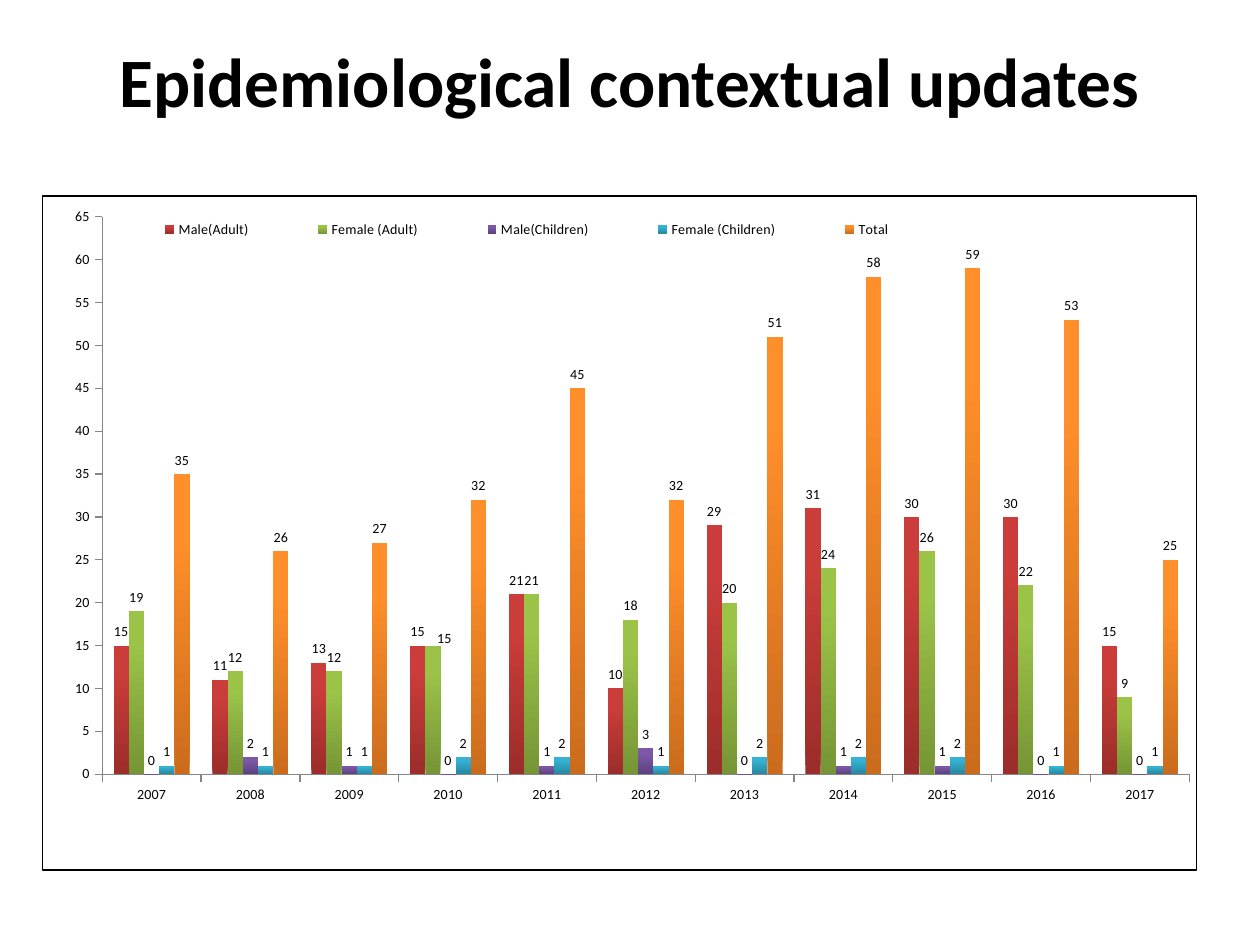
from dataclasses import dataclass

from lxml.etree import SubElement
from pptx import Presentation
from pptx.chart.data import CategoryChartData
from pptx.dml.color import RGBColor
from pptx.enum.chart import XL_CHART_TYPE, XL_LABEL_POSITION, XL_LEGEND_POSITION, XL_TICK_MARK
from pptx.enum.text import MSO_ANCHOR, PP_ALIGN
from pptx.oxml import parse_xml
from pptx.oxml.ns import nsdecls, qn
from pptx.util import Inches, Pt


@dataclass(frozen=True)
class Theme:
    """Colours, font and type sizes of the slide."""
    font: str = "Calibri"
    text: str = "000000"
    axis: str = "868686"
    title_size: float = 39.6
    chart_size: float = 8


THEME = Theme()
YEARS = [str(year) for year in range(2007, 2018)]
SERIES = [
    ("Male(Adult)", "9B2D2A", "CB3D3A", (15, 11, 13, 15, 21, 10, 29, 31, 30, 30, 15)),
    ("Female (Adult)", "769535", "9BC348", (19, 12, 12, 15, 21, 18, 20, 24, 26, 22, 9)),
    ("Male(Children)", "5D417E", "7B58A6", (0, 2, 1, 0, 1, 3, 0, 1, 1, 0, 0)),
    ("Female (Children)", "2787A0", "36B1D2", (1, 1, 1, 2, 2, 1, 2, 2, 2, 1, 1)),
    ("Total", "CB6C1D", "FF8F2A", (35, 26, 27, 32, 45, 32, 51, 58, 59, 53, 25)),
]


def style_font(font, size):
    """Apply the theme font and text colour at a size."""
    font.name = THEME.font
    font.size = Pt(size)
    font.color.rgb = RGBColor.from_string(THEME.text)


def add_title(slide, text):
    """Add the bold centred slide title."""
    frame = slide.shapes.add_textbox(Inches(0.5), Inches(0.3), Inches(9), Inches(1.25)).text_frame
    frame.word_wrap = True
    frame.vertical_anchor = MSO_ANCHOR.TOP
    frame.margin_top = frame.margin_bottom = 0
    paragraph = frame.paragraphs[0]
    paragraph.text = text
    paragraph.alignment = PP_ALIGN.CENTER
    style_font(paragraph.font, THEME.title_size)
    paragraph.font.bold = True


def set_layout(parent, index, **settings):
    """Give a chart element a manual layout."""
    for layout in parent.findall(qn("c:layout")):
        parent.remove(layout)
    layout = parse_xml(f"<c:layout {nsdecls('c')}><c:manualLayout/></c:layout>")
    for name, value in settings.items():
        SubElement(layout[0], qn(f"c:{name}")).set("val", str(value))
    parent.insert(index, layout)


def style_axis(axis):
    """Draw an axis with outside ticks and no gridlines."""
    axis.has_major_gridlines = False
    axis.major_tick_mark = XL_TICK_MARK.OUTSIDE
    axis.minor_tick_mark = XL_TICK_MARK.NONE
    axis.format.line.color.rgb = RGBColor.from_string(THEME.axis)
    axis.format.line.width = Pt(0.75)
    style_font(axis.tick_labels.font, THEME.chart_size)


def style_series(series, dark, light):
    """Fill bars from dark at the foot to light, and label their values."""
    fill = series.format.fill
    fill.gradient()
    fill.gradient_angle = 90
    for stop, color, position in zip(fill.gradient_stops, (dark, light), (0, 0.8)):
        stop.color.rgb = RGBColor.from_string(color)
        stop.position = position
    series.invert_if_negative = False
    labels = series.data_labels
    labels.show_value = True
    labels.position = XL_LABEL_POSITION.OUTSIDE_END
    style_font(labels.font, THEME.chart_size)


def shift_label(series, point, x, y):
    """Move one value label by fractions of the chart size."""
    label = series.points[point].data_label
    label.position = XL_LABEL_POSITION.OUTSIDE_END
    style_font(label.font, THEME.chart_size)
    set_layout(series.data_labels._element.find(qn("c:dLbl")), 1, x=x, y=y)


def add_border(chart):
    """Outline the chart area."""
    outline = parse_xml(
        f'<c:spPr {nsdecls("c", "a")}><a:noFill/><a:ln w="{Pt(0.75)}"><a:solidFill>'
        f'<a:srgbClr val="{THEME.text}"/></a:solidFill></a:ln></c:spPr>'
    )
    chart._chartSpace.find(qn("c:chart")).addnext(outline)


def add_legend(chart):
    """Lay the legend in one row along the top of the plot."""
    chart.has_legend = True
    legend = chart.legend
    legend.position = XL_LEGEND_POSITION.RIGHT
    legend.include_in_layout = False
    style_font(legend.font, THEME.chart_size)
    set_layout(legend._element, 1, xMode="edge", yMode="edge", x=0.05, y=0.03, w=0.74, h=0.04)


def add_case_chart(slide):
    """Add the clustered columns of cases by year."""
    data = CategoryChartData()
    data.categories = YEARS
    for name, _, _, values in SERIES:
        data.add_series(name, values)
    chart = slide.shapes.add_chart(
        XL_CHART_TYPE.COLUMN_CLUSTERED, Inches(0.33), Inches(1.55), Inches(9.17), Inches(5.36), data
    ).chart
    chart.has_title = False
    style_font(chart.font, THEME.chart_size)
    add_border(chart)
    plot = chart.plots[0]
    plot.gap_width = 150
    plot.overlap = 0
    plot.vary_by_categories = False
    for series, (_, dark, light, _) in zip(plot.series, SERIES):
        style_series(series, dark, light)
    shift_label(plot.series[1], 3, 0.01, 0.01)
    for axis in (chart.category_axis, chart.value_axis):
        style_axis(axis)
    chart.value_axis.minimum_scale = 0
    chart.value_axis.maximum_scale = 65
    chart.value_axis.major_unit = 5
    add_legend(chart)
    set_layout(chart._chartSpace.chart.plotArea, 0, layoutTarget="inner", xMode="edge",
               yMode="edge", x=0.052, y=0.031, w=0.942, h=0.827)


def main():
    """Build and save the slide."""
    presentation = Presentation()
    presentation.slide_width = Inches(10)
    presentation.slide_height = Inches(7.5)
    slide = presentation.slides.add_slide(presentation.slide_layouts[6])
    add_title(slide, "Epidemiological contextual updates")
    add_case_chart(slide)
    presentation.save("out.pptx")


if __name__ == "__main__":
    main()
